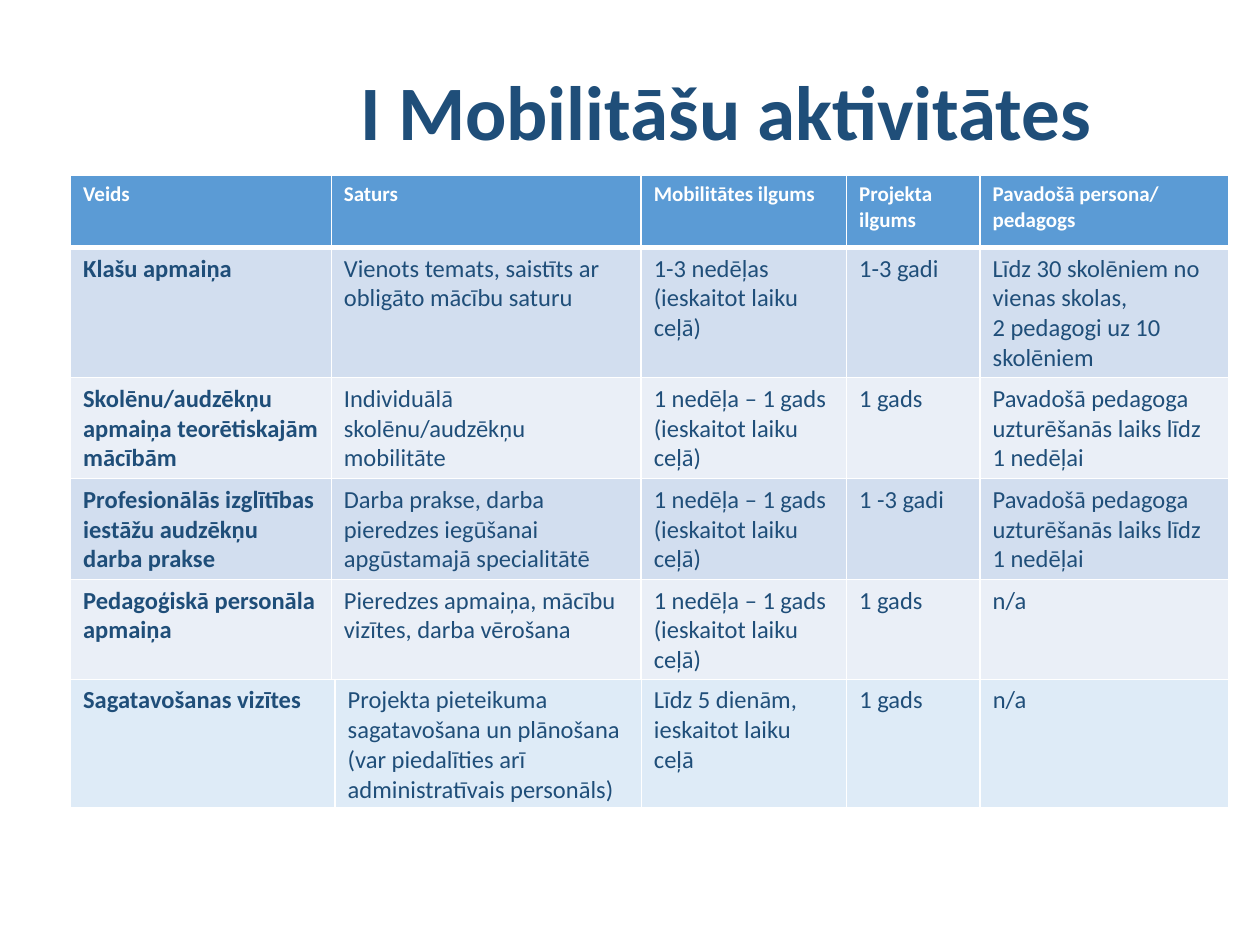
from dataclasses import dataclass

from lxml import etree
from pptx import Presentation
from pptx.dml.color import RGBColor
from pptx.enum import text
from pptx.oxml import ns
from pptx.util import Pt


@dataclass(frozen=True)
class Theme:
    font: str = "Calibri"
    ink: str = "1F4E79"
    white: str = "FFFFFF"
    header: str = "5B9BD5"
    band_dark: str = "D2DEEF"
    band_light: str = "EAEFF7"
    visit: str = "DEEBF7"
    title_size: float = 44
    header_size: float = 12
    body_size: float = 14
    rule: float = 1
    thick_rule: float = 3


@dataclass(frozen=True)
class Row:
    height: float
    fill: str
    cells: tuple[str, ...]
    header: bool = False
    bottom: float = 1


@dataclass(frozen=True)
class Grid:
    top: float
    height: float
    columns: tuple[float, ...]
    rows: tuple[Row, ...]


THEME = Theme()
LEFT, WIDTH = 40.3, 661.7
TEACHER = "Pavadošā pedagoga uzturēšanās laiks līdz 1 nedēļai"
YEAR = "1 nedēļa – 1 gads\n(ieskaitot laiku ceļā)"

ACTIVITIES = Grid(100.4, 288, (149, 177.1, 117.4, 76.3, 142.2), (
    Row(41, THEME.header,
        ("Veids", "Saturs", "Mobilitātes ilgums", "Projekta ilgums",
         "Pavadošā persona/ pedagogs"), True, THEME.thick_rule),
    Row(71.3, THEME.band_dark,
        ("Klašu apmaiņa", "Vienots temats, saistīts ar obligāto mācību saturu",
         "1-3 nedēļas (ieskaitot laiku ceļā)", "1-3 gadi",
         "Līdz 30 skolēniem no vienas skolas,\n2 pedagogi uz 10 skolēniem")),
    Row(56.2, THEME.band_light,
        ("Skolēnu/audzēkņu apmaiņa teorētiskajām mācībām",
         "Individuālā skolēnu/audzēkņu mobilitāte",
         "1 nedēļa – 1 gads (ieskaitot laiku ceļā)", "1 gads", TEACHER)),
    Row(54, THEME.band_dark,
        ("Profesionālās izglītības iestāžu audzēkņu darba prakse",
         "Darba prakse, darba pieredzes iegūšanai apgūstamajā specialitātē",
         YEAR, "1 -3 gadi", TEACHER)),
    Row(56.2, THEME.band_light,
        ("Pedagoģiskā personāla apmaiņa",
         "Pieredzes apmaiņa, mācību vizītes, darba vērošana",
         YEAR, "1 gads", "n/a")),
))

VISITS = Grid(388.2, 74.2, (151.2, 175, 117.4, 76.3, 141.8), (
    Row(71.3, THEME.visit,
        ("Sagatavošanas vizītes",
         "Projekta pieteikuma sagatavošana un plānošana "
         "(var piedalīties arī administratīvais personāls)",
         "Līdz 5 dienām, ieskaitot laiku ceļā", "1 gads", "n/a"),
        bottom=THEME.thick_rule),
))


def style_text(tf, size: float, color: str, bold: bool) -> None:
    for p in tf.paragraphs:
        for r in p.runs:
            r.font.name = THEME.font
            r.font.size = Pt(size)
            r.font.bold = bold
            r.font.color.rgb = RGBColor.from_string(color)


def add_borders(cell, bottom: float) -> None:
    """Draw white cell borders; call before the fill to keep the XML order."""
    props = cell._tc.get_or_add_tcPr()
    for side in "LRTB":
        width = bottom if side == "B" else THEME.rule
        ln = etree.SubElement(props, ns.qn(f"a:ln{side}"), w=str(Pt(width)))
        fill = etree.SubElement(ln, ns.qn("a:solidFill"))
        etree.SubElement(fill, ns.qn("a:srgbClr"), val=THEME.white)


def add_title(s, title: str) -> None:
    sp = s.shapes.add_textbox(Pt(159.8), Pt(28.8), Pt(510.5), Pt(74.2))
    tf = sp.text_frame
    tf.word_wrap = True
    tf.vertical_anchor = text.MSO_ANCHOR.MIDDLE
    tf.text = title
    p = tf.paragraphs[0]
    p.alignment = text.PP_ALIGN.CENTER
    p.line_spacing = 0.9
    style_text(tf, THEME.title_size, THEME.ink, True)


def add_grid(s, grid: Grid) -> None:
    frame = s.shapes.add_table(len(grid.rows), len(grid.columns), Pt(LEFT),
                               Pt(grid.top), Pt(WIDTH), Pt(grid.height))
    table = frame.table
    table.first_row = grid.rows[0].header
    table.horz_banding = False
    for column, width in zip(table.columns, grid.columns):
        column.width = Pt(width)
    for table_row, row in zip(table.rows, grid.rows):
        table_row.height = Pt(row.height)
        size = THEME.header_size if row.header else THEME.body_size
        color = THEME.white if row.header else THEME.ink
        for i, (cell, content) in enumerate(zip(table_row.cells, row.cells)):
            add_borders(cell, row.bottom)
            cell.fill.solid()
            cell.fill.fore_color.rgb = RGBColor.from_string(row.fill)
            cell.text_frame.text = content
            style_text(cell.text_frame, size, color, row.header or i == 0)
    frame.height = Pt(grid.height)


def main() -> None:
    prs = Presentation()
    prs.slide_width, prs.slide_height = Pt(720), Pt(540)
    s = prs.slides.add_slide(prs.slide_layouts[6])
    add_title(s, "I Mobilitāšu aktivitātes")
    for grid in (ACTIVITIES, VISITS):
        add_grid(s, grid)
    prs.save("out.pptx")


if __name__ == "__main__":
    main()
